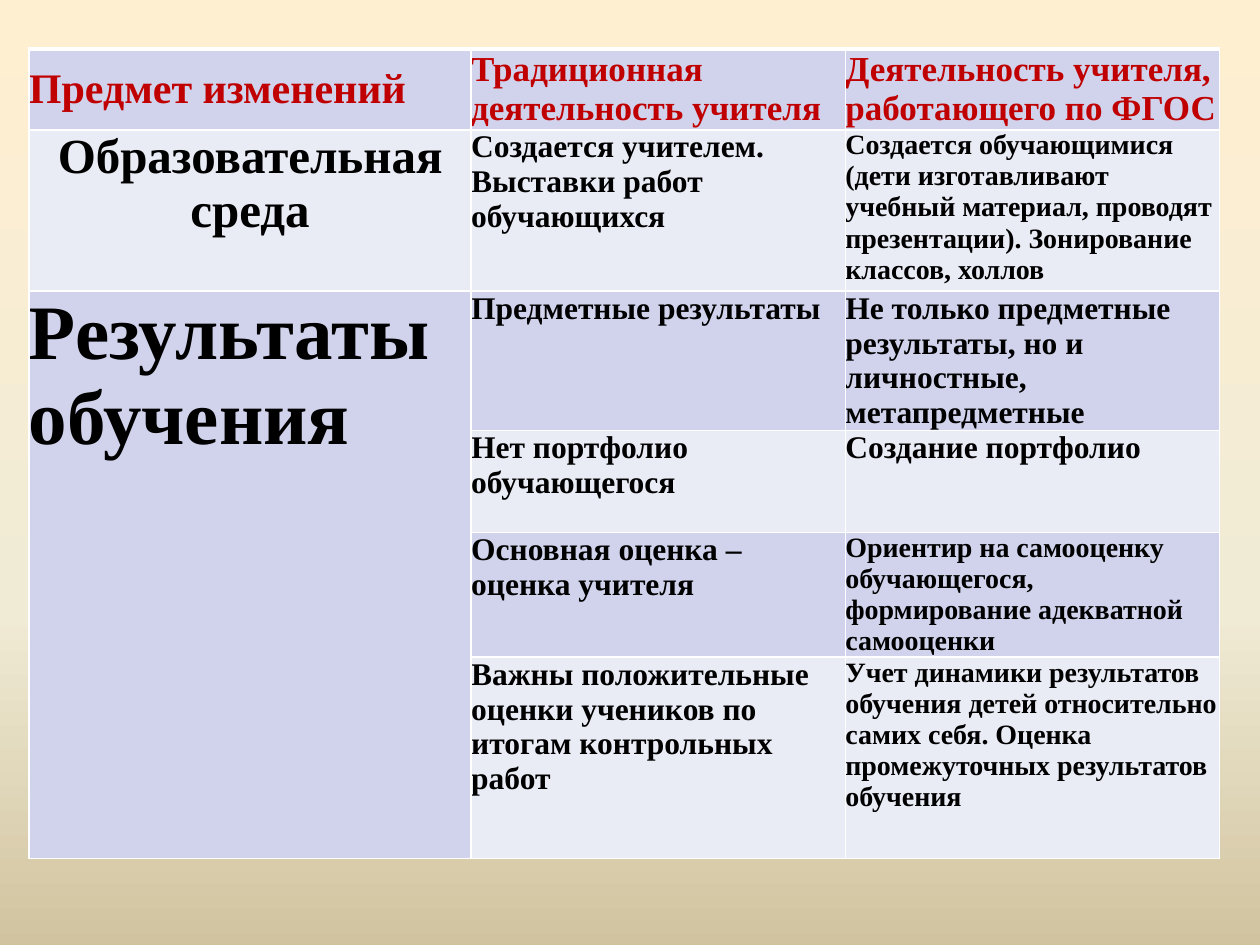
from copy import deepcopy
from dataclasses import dataclass

from lxml import etree
from pptx import Presentation
from pptx.dml.color import RGBColor
from pptx.enum.text import MSO_ANCHOR, PP_ALIGN
from pptx.oxml.ns import qn
from pptx.util import Inches, Pt

LEFT, CENTER = PP_ALIGN.LEFT, PP_ALIGN.CENTER
TOP, MIDDLE = MSO_ANCHOR.TOP, MSO_ANCHOR.MIDDLE


@dataclass(frozen=True)
class Theme:
    font: str = "Times New Roman"
    header: str = "C00000"
    text: str = "000000"
    border: str = "FFFFFF"
    bands: tuple = ("D0D3EB", "E9EBF5")
    background: tuple = ((0, "FFEFD1"), (0.65, "F0EBD5"), (1, "D1C39F"))
    small: int = 16
    body: int = 18
    column_head: int = 20
    first_head: int = 24
    topic: int = 28
    big_topic: int = 44


@dataclass(frozen=True)
class Entry:
    text: str
    size: int
    align: PP_ALIGN = LEFT


THEME = Theme()
COL_WIDTHS = (3.51, 2.97, 2.97)
ROW_HEIGHTS = (0.64, 1.28, 0.81, 0.81, 0.96, 1.6)

# Table content; None marks a cell covered by the merged topic
ROWS = (
    (Entry("Предмет изменений", THEME.first_head),
     Entry("Традиционная деятельность учителя", THEME.column_head),
     Entry("Деятельность учителя, работающего по ФГОС", THEME.column_head)),
    (Entry("Образовательная среда", THEME.topic, CENTER),
     Entry("Создается учителем. Выставки работ обучающихся", THEME.body),
     Entry("Создается обучающимися (дети изготавливают учебный материал, "
           "проводят презентации). Зонирование классов, холлов", THEME.small)),
    (Entry("Результаты обучения", THEME.big_topic),
     Entry("Предметные результаты", THEME.body),
     Entry("Не только предметные результаты, но и личностные, "
           "метапредметные", THEME.body)),
    (None,
     Entry("Нет портфолио обучающегося", THEME.body),
     Entry("Создание портфолио", THEME.body)),
    (None,
     Entry("Основная оценка – оценка учителя", THEME.body),
     Entry("Ориентир на самооценку обучающегося, формирование адекватной "
           "самооценки", THEME.small)),
    (None,
     Entry("Важны положительные оценки учеников по итогам контрольных работ",
           THEME.body),
     Entry("Учет динамики результатов обучения детей относительно самих себя. "
           "Оценка промежуточных результатов обучения", THEME.small)),
)


def set_background(s) -> None:
    fill = s.background.fill
    fill.gradient()
    fill.gradient_angle = 270
    stop_list = s.element.find(".//" + qn("a:gsLst"))
    stop_list.insert(1, deepcopy(stop_list[0]))
    for stop, (position, color) in zip(fill.gradient_stops, THEME.background):
        stop.position = position
        stop.color.rgb = RGBColor.from_string(color)


def set_borders(cell, top_width: int) -> None:
    tc_pr = cell._tc.get_or_add_tcPr()
    widths = {"a:lnL": 1, "a:lnR": 1, "a:lnT": top_width, "a:lnB": 1}
    for i, (tag, width) in enumerate(widths.items()):
        line = etree.Element(qn(tag), w=str(Pt(width)))
        solid = etree.SubElement(line, qn("a:solidFill"))
        etree.SubElement(solid, qn("a:srgbClr"), val=THEME.border)
        tc_pr.insert(i, line)


def style_cell(cell, band: str, is_header: bool) -> None:
    cell.margin_left = cell.margin_right = 0
    cell.margin_top = cell.margin_bottom = 0
    cell.vertical_anchor = MIDDLE if is_header else TOP
    cell.fill.solid()
    cell.fill.fore_color.rgb = RGBColor.from_string(band)
    set_borders(cell, 3 if is_header else 1)


def write_entry(cell, entry: Entry, color: str) -> None:
    p = cell.text_frame.paragraphs[0]
    p.text = entry.text
    p.alignment = entry.align
    font = p.runs[0].font
    font.name, font.size, font.bold = THEME.font, Pt(entry.size), True
    font.color.rgb = RGBColor.from_string(color)


def add_comparison(s) -> None:
    frame = s.shapes.add_table(len(ROWS), len(COL_WIDTHS), Inches(0.23),
                               Inches(0.39), Inches(9.45), Inches(6.67))
    table = frame.table
    for column, width in zip(table.columns, COL_WIDTHS):
        column.width = Inches(width)
    for row, height in zip(table.rows, ROW_HEIGHTS):
        row.height = Inches(height)

    for i, entries in enumerate(ROWS):
        is_header = i == 0
        # The header shares its tint with the even rows
        band = THEME.bands[i % 2]
        for j, entry in enumerate(entries):
            cell = table.cell(i, j)
            style_cell(cell, THEME.bands[0] if entry is None else band, is_header)
            if entry:
                write_entry(cell, entry, THEME.header if is_header else THEME.text)

    # The learning results topic spans the last four rows
    table.cell(2, 0).merge(table.cell(5, 0))


def main() -> None:
    prs = Presentation()
    prs.slide_width, prs.slide_height = Inches(10), Inches(7.5)
    s = prs.slides.add_slide(prs.slide_layouts[6])
    set_background(s)
    add_comparison(s)
    prs.save("out.pptx")


if __name__ == "__main__":
    main()
